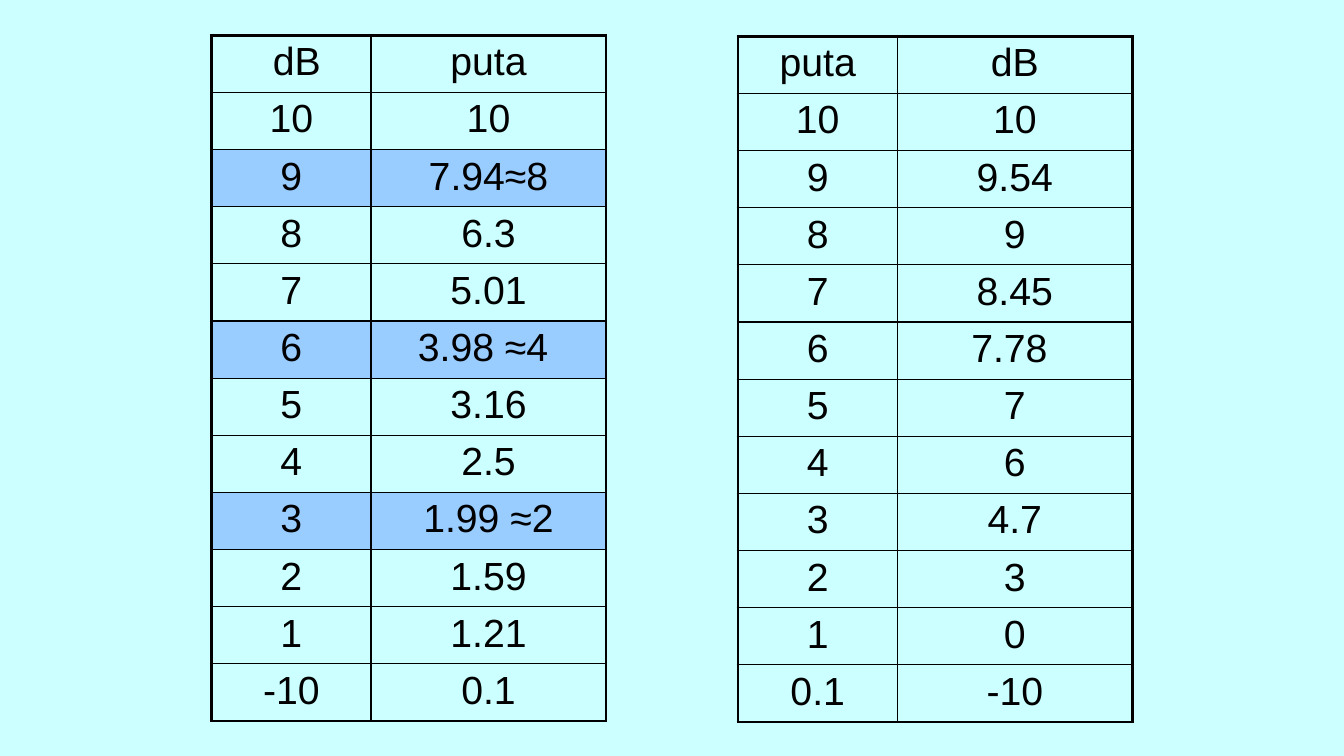
from lxml.etree import SubElement
from pptx import Presentation
from pptx.dml.color import RGBColor
from pptx.enum.text import PP_ALIGN
from pptx.oxml.ns import qn
from pptx.util import Inches, Pt

COLORS = {"background": "CCFFFF", "highlight": "99CCFF", "ink": "000000"}
COL_WIDTHS = [1.58, 2.33]
ROW_HEIGHT = 0.567
OUTER, INNER = Pt(2.25), Pt(1)

db_to_ratio = [
    (" dB", "puta"), ("10", "10"), ("9", "7.94≈8"), ("8", "6.3"),
    ("7", "5.01"), ("6", "3.98 ≈4 "), ("5", "3.16"), ("4", "2.5"),
    ("3", "1.99 ≈2"), ("2", "1.59"), ("1", "1.21"), ("-10", "0.1"),
]
ratio_to_db = [
    ("puta", "dB"), ("10", "10"), ("9", "9.54"), ("8", "9"),
    ("7", "8.45"), ("6", "7.78 "), ("5", "7"), ("4", "6"),
    ("3", "4.7"), ("2", "3"), ("1", "0"), ("0.1", "-10"),
]


def add_border(cell, side, width):
    ln = SubElement(cell._tc.get_or_add_tcPr(), qn(f"a:ln{side}"), w=str(width))
    fill = SubElement(ln, qn("a:solidFill"))
    SubElement(fill, qn("a:srgbClr"), val=COLORS["ink"])


prs = Presentation()
prs.slide_width, prs.slide_height = Inches(13.33), Inches(7.5)
s = prs.slides.add_slide(prs.slide_layouts[6])
s.background.fill.solid()
s.background.fill.fore_color.rgb = RGBColor.from_string(COLORS["background"])

for left, top, rows, highlighted in [
    (2.1, 0.35, db_to_ratio, {"9", "6", "3"}),
    (7.32, 0.36, ratio_to_db, set()),
]:
    table = s.shapes.add_table(
        len(rows), len(COL_WIDTHS), Inches(left), Inches(top),
        Inches(sum(COL_WIDTHS)), Inches(ROW_HEIGHT * len(rows)),
    ).table
    table.first_row = table.horz_banding = False
    for col, width in zip(table.columns, COL_WIDTHS):
        col.width = Inches(width)
    for r, values in enumerate(rows):
        table.rows[r].height = Inches(ROW_HEIGHT)
        for c, value in enumerate(values):
            cell = table.cell(r, c)
            cell.text = value
            p = cell.text_frame.paragraphs[0]
            p.alignment = PP_ALIGN.CENTER
            p.font.name = "Arial"
            p.font.size = Pt(28)
            p.font.color.rgb = RGBColor.from_string(COLORS["ink"])
            for side, on_edge in [
                ("L", c == 0), ("R", c == len(values) - 1),
                ("T", r == 0), ("B", r == len(rows) - 1),
            ]:
                add_border(cell, side, OUTER if on_edge else INNER)
            if values[0] in highlighted:
                cell.fill.solid()
                cell.fill.fore_color.rgb = RGBColor.from_string(COLORS["highlight"])
            else:
                cell.fill.background()

prs.save("out.pptx")
